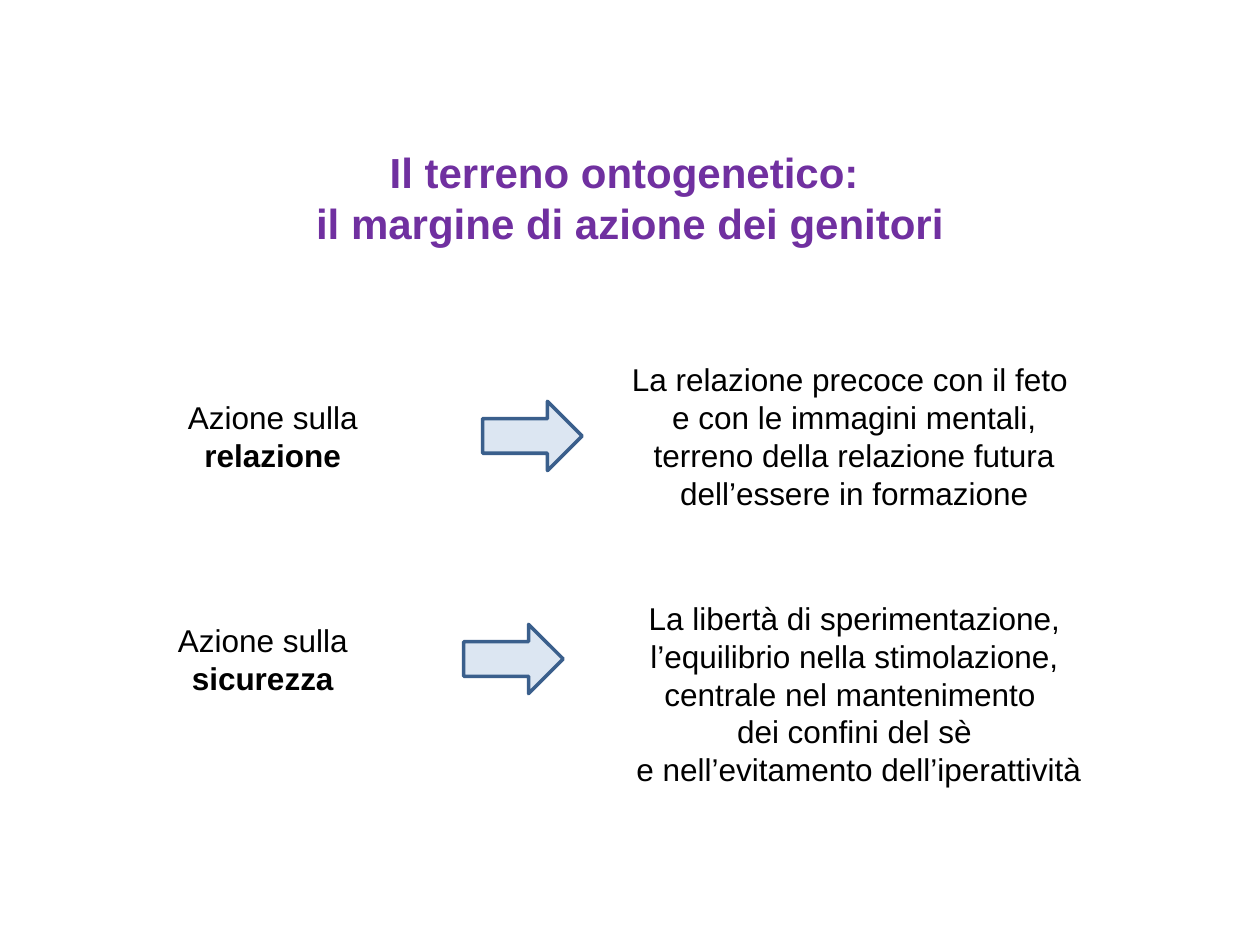
from pptx import Presentation
from pptx.dml.color import RGBColor
from pptx.enum.shapes import MSO_SHAPE
from pptx.enum.text import MSO_ANCHOR, PP_ALIGN
from pptx.util import Inches, Pt

CENTER = PP_ALIGN.CENTER
MIDDLE = MSO_ANCHOR.MIDDLE
RIGHT_ARROW = MSO_SHAPE.RIGHT_ARROW

FONT = "Arial"
PURPLE, BLACK = "7030A0", "000000"
PALE_BLUE, STEEL_BLUE = "DCE6F2", "3A5F8C"
ACTION_SIZE = (2.51, 0.82)
ARROW_SIZE = (0.79, 0.55)

ROWS = [
    {
        "middle": 3.46,
        "action_left": 0.91,
        "arrow_left": 3.83,
        "goal": "relazione",
        "meaning_box": (4.81, 2.77, 3.94, 1.38),
        "meaning": [
            "La relazione precoce con il feto ",
            "e con le immagini mentali, terreno della relazione futura",
            "dell’essere in formazione",
        ],
    },
    {
        "middle": 5.23,
        "action_left": 0.83,
        "arrow_left": 3.68,
        "goal": "sicurezza",
        "meaning_box": (4.62, 4.54, 4.32, 1.93),
        "meaning": [
            "La libertà di sperimentazione,",
            "l’equilibrio nella stimolazione, centrale nel mantenimento ",
            "dei confini del sè",
            " e nell’evitamento dell’iperattività",
        ],
    },
]


def rgb(color):
    """Turn a hex string into a colour."""
    return RGBColor.from_string(color)


def style_text(frame, size, color, bold=None):
    """Centre the text of a frame and set its font."""
    frame.word_wrap = True
    frame.vertical_anchor = MIDDLE
    for para in frame.paragraphs:
        para.alignment = CENTER
        para.font.name = FONT
        para.font.size = Pt(size)
        para.font.bold = bold
        para.font.color.rgb = rgb(color)


def set_title(page, text):
    """Fill and place the title, and drop the unused subtitle."""
    title, subtitle = page.placeholders
    subtitle.element.getparent().remove(subtitle.element)
    title.left, title.top = Inches(0.75), Inches(0.76)
    title.width, title.height = Inches(8.5), Inches(1.61)
    title.text_frame.text = text
    style_text(title.text_frame, 24, PURPLE, bold=True)


def centred_box(left, middle, size):
    """Return the box of a given size around a row's middle line."""
    width, height = size
    return left, middle - height / 2, width, height


def add_text(page, bounds, lines, bold_ending=""):
    """Add a text box with one paragraph per line and a bold ending."""
    box = page.shapes.add_textbox(*map(Inches, bounds))
    frame = box.text_frame
    frame.text = "\n".join(lines)
    if bold_ending:
        span = frame.paragraphs[-1].add_run()
        span.text = bold_ending
        span.font.bold = True
    style_text(frame, 18, BLACK)


def add_arrow(page, bounds):
    """Add a pale block arrow pointing right."""
    arrow = page.shapes.add_shape(RIGHT_ARROW, *map(Inches, bounds))
    arrow.shadow.inherit = False
    arrow.fill.solid()
    arrow.fill.fore_color.rgb = rgb(PALE_BLUE)
    arrow.line.color.rgb = rgb(STEEL_BLUE)
    arrow.line.width = Pt(2)


def main():
    """Build the slide and save it."""
    deck = Presentation()
    deck.slide_width, deck.slide_height = Inches(10), Inches(7.5)
    page = deck.slides.add_slide(deck.slide_layouts[0])
    set_title(page, "Il terreno ontogenetico: \vil margine di azione dei genitori")
    for row in ROWS:
        action = centred_box(row["action_left"], row["middle"], ACTION_SIZE)
        add_text(page, action, ["Azione sulla "], row["goal"])
        add_text(page, row["meaning_box"], row["meaning"])
        add_arrow(page, centred_box(row["arrow_left"], row["middle"], ARROW_SIZE))
    deck.save("out.pptx")


if __name__ == "__main__":
    main()
